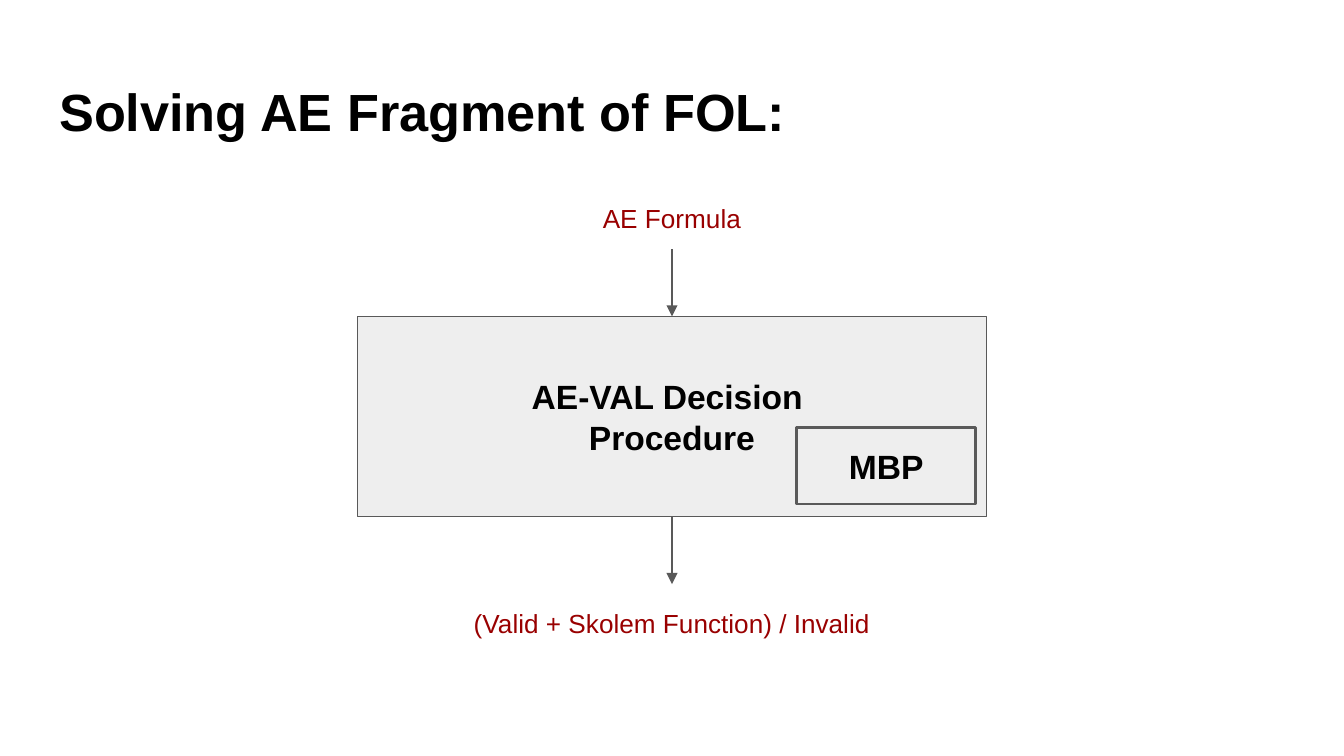
import pptx
import pptx.dml.color
import pptx.enum.shapes
import pptx.enum.text
import pptx.oxml
import pptx.oxml.ns
import pptx.util
from pptx.util import Cm

FONT = "Arial"
BLACK, DARK_RED, GREY, LIGHT_GREY = "000000", "990000", "595959", "EEEEEE"
CENTER = pptx.enum.text.PP_ALIGN.CENTER
TOP = pptx.enum.text.MSO_ANCHOR.TOP
MIDDLE = pptx.enum.text.MSO_ANCHOR.MIDDLE
MARGIN = Cm(0.25)
SLIDE_WIDTH = Cm(25.4)
MIDDLE_X = SLIDE_WIDTH // 2


def color(hex_string):
    return pptx.dml.color.RGBColor.from_string(hex_string)


def set_text(shape, lines, size, font_color, bold=False, alignment=CENTER, anchor=TOP):
    frame = shape.text_frame
    frame.text = "\n".join(lines)
    frame.word_wrap = True
    frame.auto_size = pptx.enum.text.MSO_AUTO_SIZE.NONE
    frame.vertical_anchor = anchor
    frame.margin_left = frame.margin_right = MARGIN
    frame.margin_top = frame.margin_bottom = MARGIN
    for paragraph in frame.paragraphs:
        paragraph.alignment = alignment
        for run in paragraph.runs:
            run.font.name = FONT
            run.font.size = pptx.util.Pt(size)
            run.font.bold = bold
            run.font.color.rgb = color(font_color)


def set_title(slide, text):
    title = slide.shapes.title
    title.left, title.top = Cm(0.87), Cm(1.24)
    title.width, title.height = Cm(23.67), Cm(1.59)
    set_text(title, [text], 28, BLACK, True, pptx.enum.text.PP_ALIGN.LEFT)


def add_box(slide, left, top, width, height, lines, line_width):
    box = slide.shapes.add_shape(
        pptx.enum.shapes.MSO_SHAPE.RECTANGLE, left, top, width, height)
    box.shadow.inherit = False
    box.fill.solid()
    box.fill.fore_color.rgb = color(LIGHT_GREY)
    box.line.color.rgb = color(GREY)
    box.line.width = pptx.util.Pt(line_width)
    set_text(box, lines, 18, BLACK, bold=True, anchor=MIDDLE)


def add_label(slide, top, width, text):
    """Add a label centred on the slide's vertical axis."""
    label = slide.shapes.add_textbox(MIDDLE_X - width // 2, top, width, Cm(1.27))
    set_text(label, [text], 14, DARK_RED)


def add_down_arrow(slide, top, length):
    arrow = slide.shapes.add_connector(
        pptx.enum.shapes.MSO_CONNECTOR.STRAIGHT, MIDDLE_X, top, MIDDLE_X, top + length)
    arrow.line.color.rgb = color(GREY)
    arrow.line.width = pptx.util.Pt(0.75)
    head = pptx.oxml.parse_xml(
        f'<a:tailEnd {pptx.oxml.ns.nsdecls("a")} type="triangle" w="med" len="med"/>')
    arrow.line._get_or_add_ln().append(head)
    arrow._element.spPr.append(
        pptx.oxml.parse_xml(f'<a:effectLst {pptx.oxml.ns.nsdecls("a")}/>'))


def main():
    presentation = pptx.Presentation()
    presentation.slide_width, presentation.slide_height = SLIDE_WIDTH, Cm(14.29)
    slide = presentation.slides.add_slide(presentation.slide_layouts[5])
    set_title(slide, "Solving AE Fragment of FOL:")

    box_top, box_width, box_height = Cm(5.98), Cm(11.89), Cm(3.79)
    arrow_length = Cm(1.27)
    add_box(slide, MIDDLE_X - box_width // 2, box_top, box_width, box_height,
            ["AE-VAL Decision ", "Procedure"], 0.75)
    for arrow_top in (box_top - arrow_length, box_top + box_height):
        add_down_arrow(slide, arrow_top, arrow_length)
    add_label(slide, Cm(3.58), Cm(7.21), "AE Formula")
    add_label(slide, Cm(11.23), Cm(8.08), "(Valid + Skolem Function) / Invalid")
    add_box(slide, Cm(15.06), Cm(8.08), Cm(3.38), Cm(1.45), ["MBP"], 1.5)

    presentation.save("out.pptx")


if __name__ == "__main__":
    main()
